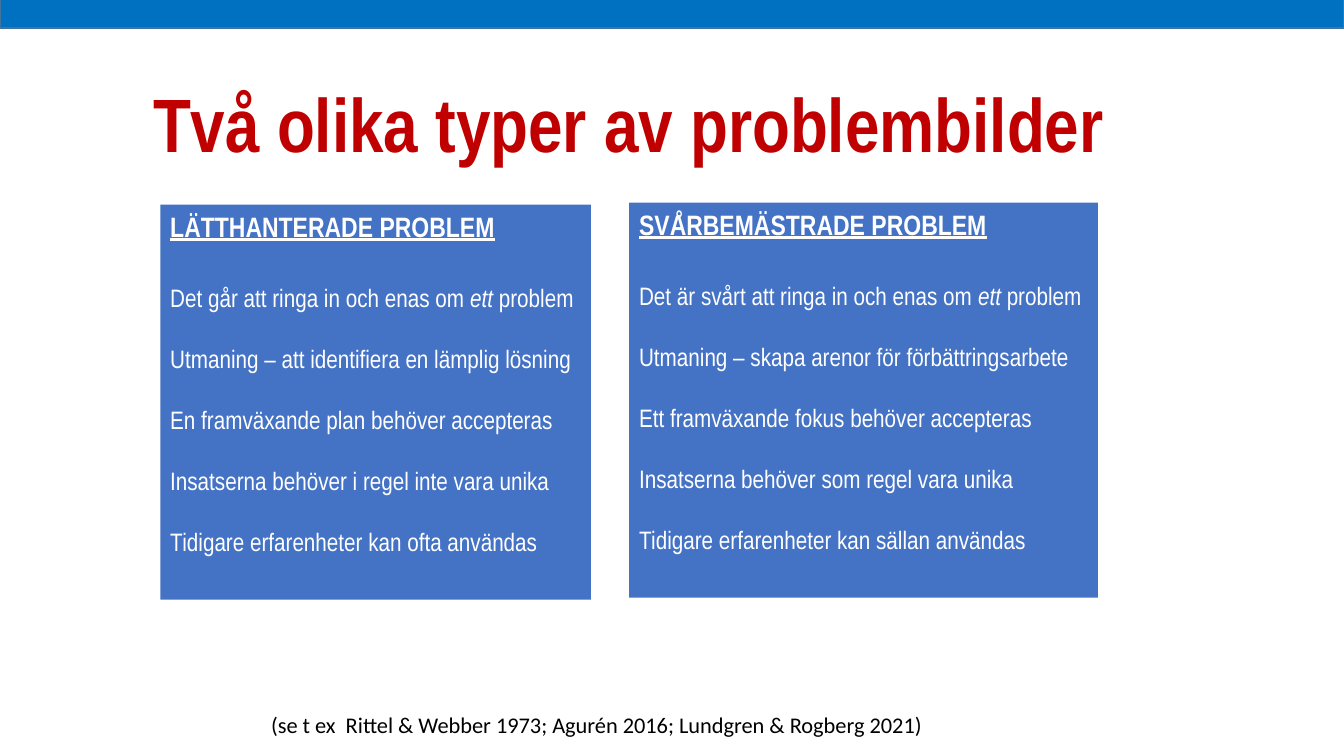
import pptx
import pptx.dml.color
import pptx.enum.shapes
import pptx.enum.text
import pptx.util

Inches = pptx.util.Inches
Pt = pptx.util.Pt
RGBColor = pptx.dml.color.RGBColor

RED = RGBColor(0xC0, 0x00, 0x00)
BLUE = RGBColor(0x00, 0x70, 0xC0)
EDGE = RGBColor(0x43, 0x73, 0x9E)
PANEL = RGBColor(0x44, 0x72, 0xC4)
WHITE = RGBColor(0xFF, 0xFF, 0xFF)
BLACK = RGBColor(0x00, 0x00, 0x00)

# Each line is a list of (text, italic) runs.
EASY = [
    [("Det går att ringa in och enas om ", False), ("ett", True), (" problem", False)],
    [("Utmaning – att identifiera en lämplig lösning", False)],
    [("En framväxande plan behöver accepteras", False)],
    [("Insatserna behöver i regel inte vara unika", False)],
    [("Tidigare erfarenheter kan ofta användas", False)],
]
HARD = [
    [("Det är svårt att ringa in och enas om ", False), ("ett", True), (" problem", False)],
    [("Utmaning – skapa arenor för förbättringsarbete", False)],
    [("Ett framväxande fokus behöver accepteras", False)],
    [("Insatserna behöver som regel vara unika", False)],
    [("Tidigare erfarenheter kan sällan användas", False)],
]


class Deck:
    def __init__(self):
        self.show = pptx.Presentation()
        self.show.slide_width = Inches(13.33)
        self.show.slide_height = Inches(7.5)
        self.slide = self.show.slides.add_slide(self.show.slide_layouts[6])
        self.face = "Arial Narrow"

    def font(self, para, size, color, bold=False, face=None):
        para.font.name = face or self.face
        para.font.size = Pt(size)
        para.font.color.rgb = color
        para.font.bold = bold

    def text(self, box, words, size, color, bold=False, face=None, wrap=True):
        frame = self.slide.shapes.add_textbox(*map(Inches, box)).text_frame
        frame.word_wrap = wrap
        para = frame.paragraphs[0]
        para.text = words
        self.font(para, size, color, bold, face)

    def rect(self, box, fill, edge=None):
        kind = pptx.enum.shapes.MSO_SHAPE.RECTANGLE
        shape = self.slide.shapes.add_shape(kind, *map(Inches, box))
        shape.shadow.inherit = False
        shape.fill.solid()
        shape.fill.fore_color.rgb = fill
        if edge is None:
            shape.line.fill.background()
        else:
            shape.line.color.rgb = edge
            shape.line.width = Pt(1)
        return shape

    def panel(self, box, head, lines):
        """Draw a filled box with an underlined heading and spaced lines."""
        frame = self.rect(box, PANEL).text_frame
        frame.word_wrap = True
        frame.vertical_anchor = pptx.enum.text.MSO_ANCHOR.TOP
        para = frame.paragraphs[0]
        para.text = head
        para.alignment = pptx.enum.text.PP_ALIGN.LEFT
        para.space_after = Pt(6)
        self.font(para, 20, WHITE, bold=True)
        para.font.underline = True
        for line in lines:
            para = frame.add_paragraph()
            para.alignment = pptx.enum.text.PP_ALIGN.LEFT
            para.space_before = Pt(22)
            self.font(para, 18, WHITE)
            for words, slant in line:
                run = para.add_run()
                run.text = words
                if slant:
                    run.font.italic = True


def main():
    deck = Deck()
    deck.text((1.42, 0.71, 11.01, 0.87), "Två olika typer av problembilder",
              54, RED, bold=True)
    deck.rect((0, -0.1, 13.33, 0.38), BLUE, EDGE)
    deck.text((2.59, 7.01, 6.75, 0.37),
              "(se t ex  Rittel & Webber 1973; Agurén 2016; Lundgren & Rogberg 2021)",
              16, BLACK, face="Calibri", wrap=False)
    deck.panel((6.24, 2.01, 4.65, 3.92), "SVÅRBEMÄSTRADE PROBLEM", HARD)
    deck.panel((1.59, 2.03, 4.27, 3.92), "LÄTTHANTERADE PROBLEM", EASY)
    deck.show.save("out.pptx")


if __name__ == "__main__":
    main()
